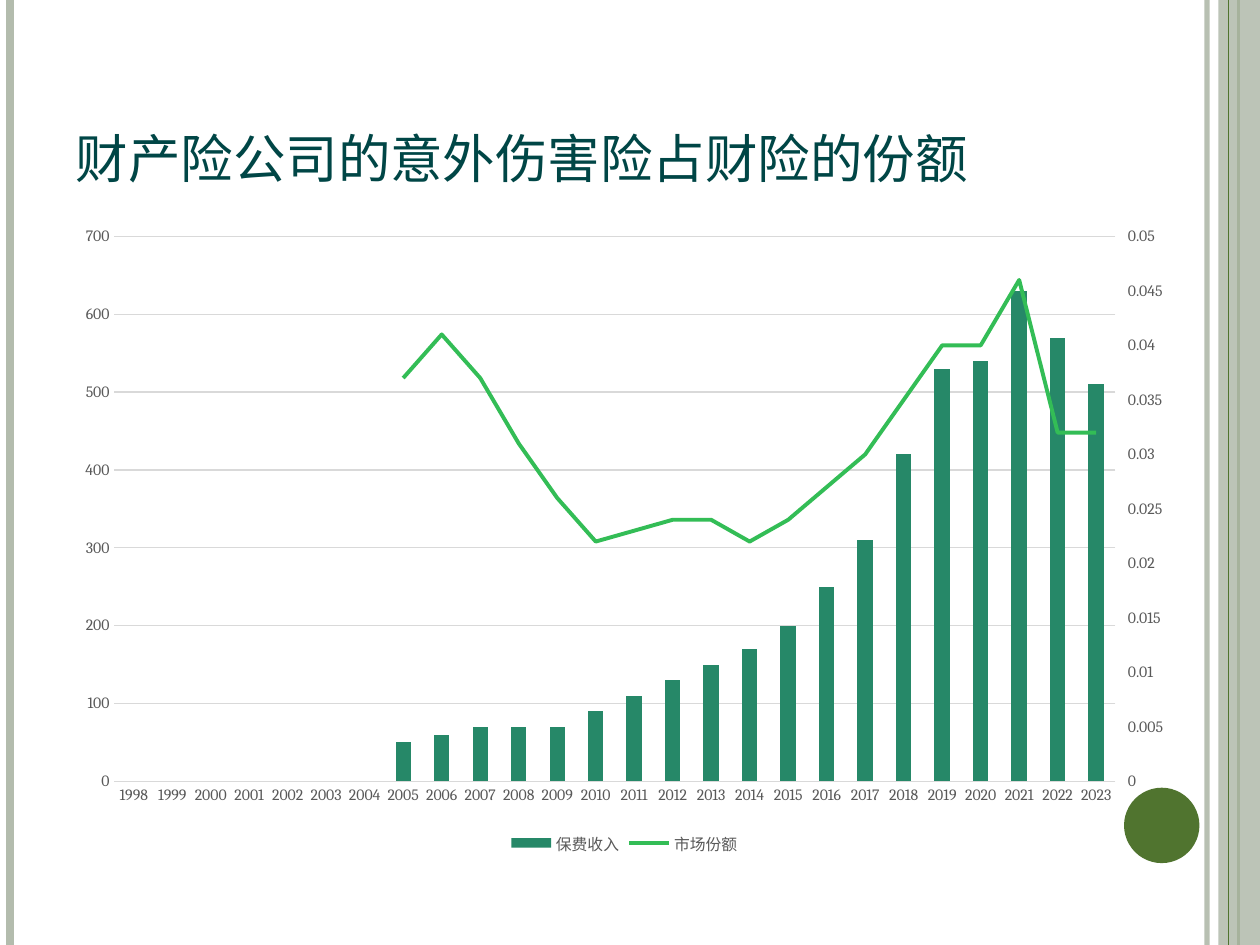
from lxml import etree
from pptx import Presentation
from pptx.chart.data import CategoryChartData
from pptx.dml.color import RGBColor
from pptx.enum.chart import XL_CHART_TYPE, XL_LEGEND_POSITION, XL_MARKER_STYLE, XL_TICK_MARK
from pptx.enum.shapes import MSO_CONNECTOR, MSO_SHAPE
from pptx.enum.text import MSO_ANCHOR, MSO_AUTO_SIZE, PP_ALIGN
from pptx.oxml import parse_xml
from pptx.oxml.ns import nsdecls, qn
from pptx.util import Cm, Pt

SAGE = RGBColor(0xB3, 0xBC, 0xAD)
OLIVE = RGBColor(0x50, 0x74, 0x2F)
DARK_TEAL = RGBColor(0x00, 0x46, 0x46)
GRAY = RGBColor(0x59, 0x59, 0x59)
GRID = RGBColor(0xD9, 0xD9, 0xD9)
BAR_GREEN = RGBColor(0x26, 0x88, 0x68)
LINE_GREEN = RGBColor(0x33, 0xBD, 0x56)
FONT = "Cambria"
WIDTH, HEIGHT = Cm(25.4), Cm(19.05)

YEARS = range(1998, 2024)
NO_DATA = [None] * 7  # 1998 to 2004
PREMIUMS = NO_DATA + [50, 60, 70, 70, 70, 90, 110, 130, 150, 170, 200, 250,
                      310, 420, 530, 540, 630, 570, 510]
SHARES = NO_DATA + [0.037, 0.041, 0.037, 0.031, 0.026, 0.022, 0.023, 0.024,
                    0.024, 0.022, 0.024, 0.027, 0.03, 0.035, 0.04, 0.04,
                    0.046, 0.032, 0.032]

SECOND_AXES = f"""
<c:plotArea {nsdecls("c", "a")}>
  <c:lineChart>
    <c:grouping val="standard"/><c:varyColors val="0"/>
    <c:marker val="1"/><c:axId val="5001"/><c:axId val="5002"/>
  </c:lineChart>
  <c:valAx>
    <c:axId val="5002"/>
    <c:scaling><c:orientation val="minMax"/><c:max val="0.05"/><c:min val="0"/></c:scaling>
    <c:delete val="0"/><c:axPos val="r"/>
    <c:numFmt formatCode="General" sourceLinked="0"/>
    <c:majorTickMark val="out"/><c:minorTickMark val="none"/><c:tickLblPos val="nextTo"/>
    <c:spPr><a:ln><a:noFill/></a:ln></c:spPr>
    <c:txPr><a:bodyPr/><a:p><a:pPr><a:defRPr sz="900">
      <a:solidFill><a:srgbClr val="{GRAY}"/></a:solidFill><a:latin typeface="{FONT}"/>
    </a:defRPr></a:pPr><a:endParaRPr lang="zh-CN"/></a:p></c:txPr>
    <c:crossAx val="5001"/><c:crosses val="max"/><c:majorUnit val="0.005"/>
  </c:valAx>
  <c:catAx>
    <c:axId val="5001"/><c:scaling><c:orientation val="minMax"/></c:scaling>
    <c:delete val="1"/><c:axPos val="b"/><c:crossAx val="5002"/>
  </c:catAx>
</c:plotArea>"""


def set_alpha(fill_parent, percent):
    color = fill_parent.find(".//" + qn("a:srgbClr"))
    etree.SubElement(color, qn("a:alpha"), val=str(percent * 1000))


def add_stripe(s, x, color, width, alpha=None):
    line = s.shapes.add_connector(MSO_CONNECTOR.STRAIGHT, Cm(x), 0, Cm(x), HEIGHT)
    line.line.color.rgb = color
    line.line.width = Pt(width)
    sp_pr = line._element.spPr
    if alpha:
        set_alpha(sp_pr, alpha)
    etree.SubElement(sp_pr, qn("a:effectLst"))


def add_plain_shape(s, kind, x, y, w, h, color, alpha=None):
    sp = s.shapes.add_shape(kind, Cm(x), Cm(y), Cm(w), Cm(h))
    sp.shadow.inherit = False
    sp.fill.solid()
    sp.fill.fore_color.rgb = color
    sp.line.fill.background()
    if alpha:
        set_alpha(sp._element.spPr, alpha)


def format_title(s, text):
    title = s.shapes.title
    title.left, title.top, title.width, title.height = Cm(1.27), Cm(0.76), Cm(20.75), Cm(3.18)
    tf = title.text_frame
    tf.auto_size = MSO_AUTO_SIZE.NONE
    tf.vertical_anchor = MSO_ANCHOR.BOTTOM
    p = tf.paragraphs[0]
    p.alignment = PP_ALIGN.LEFT
    r = p.add_run()
    r.text = text
    r.font.name, r.font.size = FONT, Pt(30)
    r.font.color.rgb = DARK_TEAL


def format_font(font, size, color):
    font.name, font.size = FONT, Pt(size)
    font.color.rgb = color


def move_to_second_axis(chart, series):
    """Turn a column series into a line on a right-hand axis."""
    ser = series._element
    for bar_only in ser.findall(qn("c:invertIfNegative")):
        ser.remove(bar_only)
    plot_area = chart._chartSpace.chart.plotArea
    line_chart, *axes = list(parse_xml(SECOND_AXES))
    line_chart.insert(2, ser)
    plot_area.find(qn("c:barChart")).addnext(line_chart)
    last_axis = plot_area.find(qn("c:valAx"))
    for axis in reversed(axes):
        last_axis.addnext(axis)


def add_combined_chart(s):
    data = CategoryChartData()
    data.categories = [str(year) for year in YEARS]
    data.add_series("保费收入", PREMIUMS)
    data.add_series("市场份额", SHARES)
    chart = s.shapes.add_chart(XL_CHART_TYPE.COLUMN_CLUSTERED, Cm(1.27), Cm(4.32),
                               Cm(22.63), Cm(13), data).chart
    chart.has_title = False
    format_font(chart.font, 9, GRAY)

    # Left and bottom axes
    cat, val = chart.category_axis, chart.value_axis
    for axis in (cat, val):
        axis.major_tick_mark = axis.minor_tick_mark = XL_TICK_MARK.NONE
        format_font(axis.tick_labels.font, 9, GRAY)
    cat.format.line.color.rgb = GRID
    cat.format.line.width = Pt(0.75)
    val.minimum_scale, val.maximum_scale, val.major_unit = 0, 700, 100
    val.format.line.fill.background()
    val.major_gridlines.format.line.color.rgb = GRID
    val.major_gridlines.format.line.width = Pt(0.75)

    # Columns and line
    bars = chart.plots[0]
    bars.gap_width = 150
    bars.vary_by_categories = False
    premium, share = bars.series
    premium.format.fill.solid()
    premium.format.fill.fore_color.rgb = BAR_GREEN
    move_to_second_axis(chart, share)
    share = chart.plots[1].series[0]
    share.smooth = False
    share.marker.style = XL_MARKER_STYLE.NONE
    share.format.line.color.rgb = LINE_GREEN
    share.format.line.width = Pt(2.25)

    # Legend
    chart.has_legend = True
    chart.legend.position = XL_LEGEND_POSITION.BOTTOM
    chart.legend.include_in_layout = False
    format_font(chart.legend.font, 9, GRAY)


def main():
    prs = Presentation()
    prs.slide_width, prs.slide_height = WIDTH, HEIGHT
    s = prs.slides.add_slide(prs.slide_layouts[5])

    # Side decoration
    add_stripe(s, 24.33, SAGE, 3, 93)
    add_stripe(s, 0.2, SAGE, 4.5)
    add_stripe(s, 24.97, OLIVE, 1.5)
    add_plain_shape(s, MSO_SHAPE.RECTANGLE, 24.56, 0, 0.84, 19.05, SAGE, 87)
    add_stripe(s, 24.77, OLIVE, 0.75)
    add_plain_shape(s, MSO_SHAPE.OVAL, 22.66, 15.88, 1.52, 1.52, OLIVE)

    # Content
    format_title(s, "财产险公司的意外伤害险占财险的份额")
    add_combined_chart(s)
    prs.save("out.pptx")


if __name__ == "__main__":
    main()
